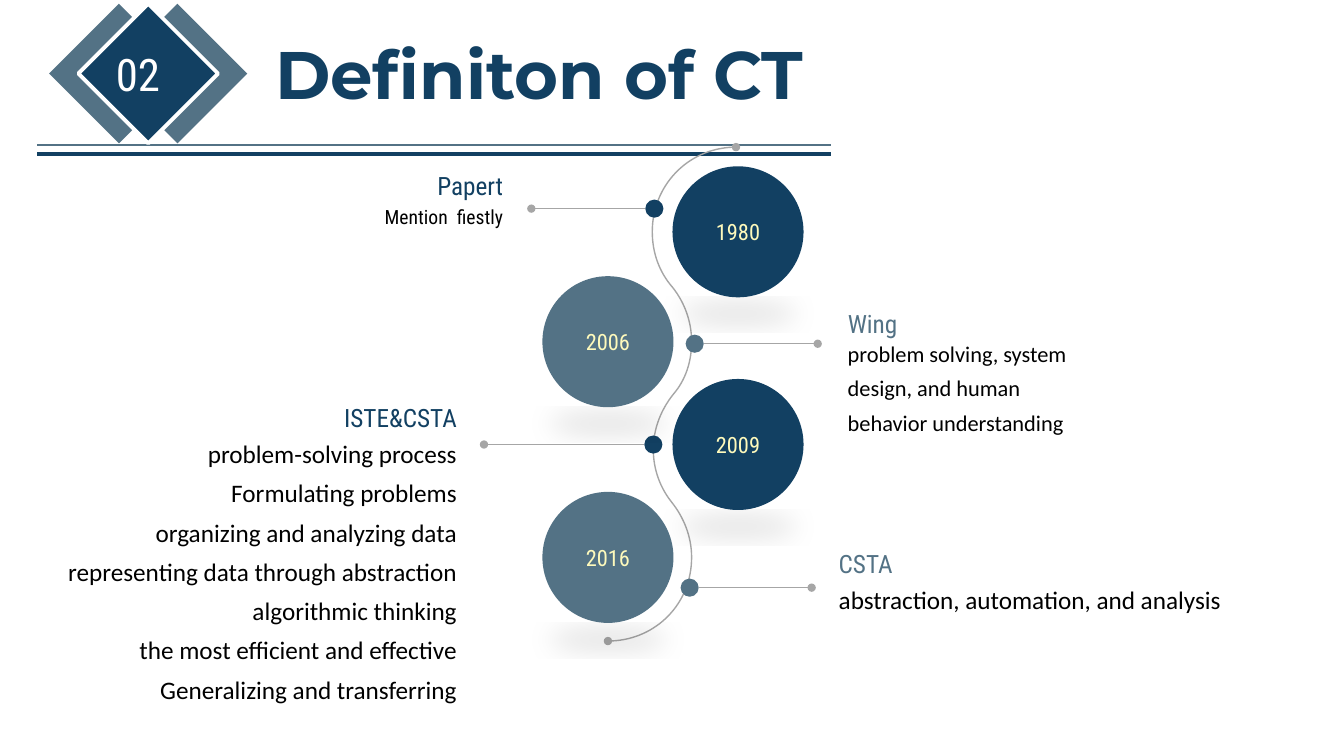
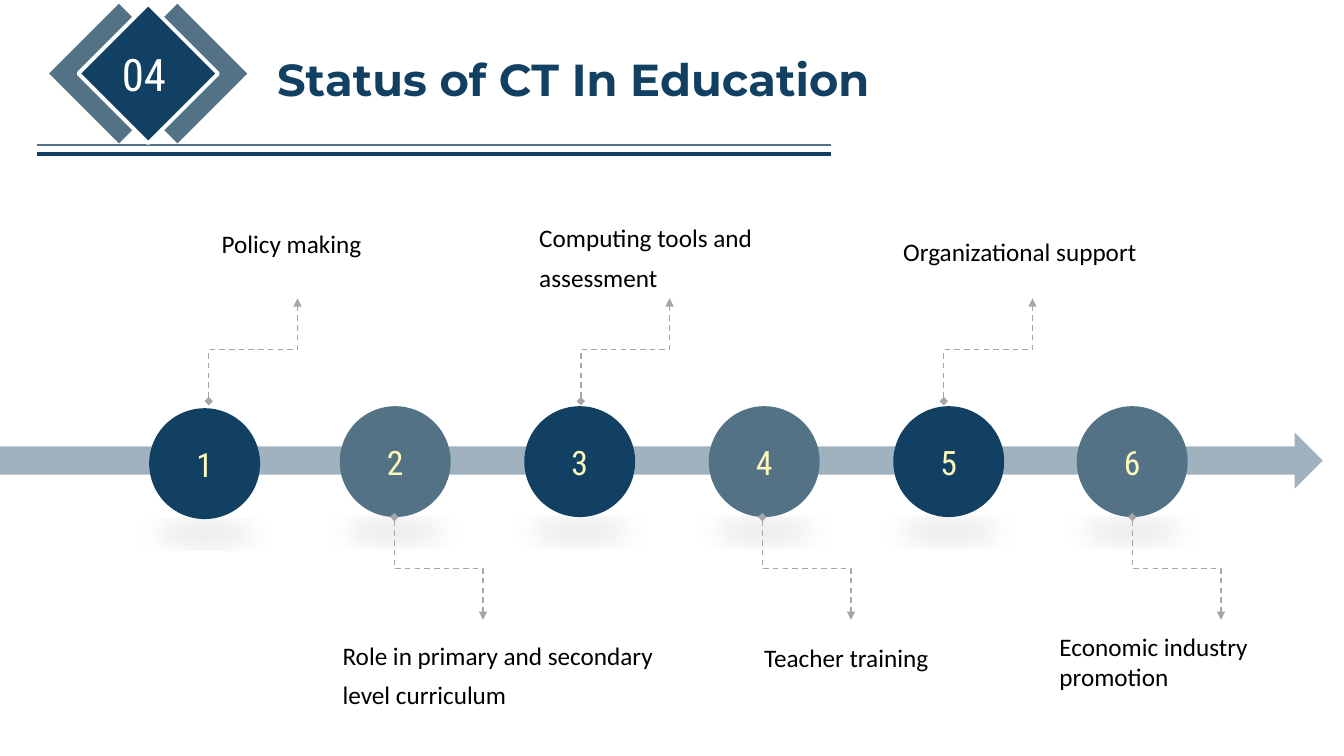
from lxml.etree import SubElement
from pptx import Presentation
from pptx.dml.color import RGBColor
from pptx.enum.dml import MSO_LINE
from pptx.enum.shapes import MSO_CONNECTOR as Link, MSO_SHAPE as Preset
from pptx.enum.text import MSO_ANCHOR as Anchor, MSO_AUTO_SIZE as AutoSize, PP_ALIGN as Align
from pptx.oxml.ns import qn
from pptx.util import Inches, Pt

NAVY, STEEL, GREY = "124062", "537285", "A6A6A6"
WHITE, BLACK, CREAM = "FFFFFF", "000000", "FEFABC"
LABEL_FONT, BODY_FONT, TITLE_FONT = "Roboto Condensed", "Calibri", "Montserrat"

MILESTONES = [
    ("1980", 6.67, 1.65, NAVY), ("2006", 5.38, 2.74, STEEL),
    ("2009", 6.67, 3.76, NAVY), ("2016", 5.38, 4.88, STEEL),
]
DOTS = [
    (6.4, 1.98, NAVY, 6.4, 5.27), (6.8, 3.32, STEEL, 6.98, 8.11),
    (6.39, 4.32, NAVY, 6.39, 4.8), (6.75, 5.74, STEEL, 6.93, 8.05),
]
WAVE = [
    (6.03, 6.36),
    (6.49, 6.36), (6.86, 5.99), (6.86, 5.53),
    (6.86, 5.32), (6.78, 5.13), (6.66, 4.98),
    (6.55, 4.84), (6.48, 4.66), (6.48, 4.46),
    (6.48, 4.25), (6.56, 4.06), (6.68, 3.91),
    (6.8, 3.77), (6.86, 3.59), (6.86, 3.39),
    (6.86, 3.19), (6.79, 3), (6.67, 2.85),
    (6.54, 2.7), (6.47, 2.51), (6.47, 2.3),
    (6.47, 1.84), (6.84, 1.46), (7.3, 1.46),
]
HEADINGS = [
    ("Papert", (4.16, 1.54, 0.93, 0.45), NAVY, Align.RIGHT),
    ("Wing", (8.31, 2.91, 0.79, 0.86), STEEL, Align.LEFT),
    ("ISTE&CSTA", (3.18, 3.84, 1.45, 0.45), NAVY, Align.RIGHT),
    ("CSTA", (8.22, 5.29, 0.79, 0.45), STEEL, Align.LEFT),
]
PROCESS = """problem-solving process
Formulating problems
organizing and analyzing data
representing data through abstraction
algorithmic thinking
the most efficient and effective
Generalizing and transferring"""
STEPS = [
    ("Policy making", (2.1, 2.22, 2.76, 0.4), 1, 1.48, 4.05, 2.07),
    ("Role in primary and secondary level curriculum", (3.3, 6.21, 3.34, 0.89), 1.3, 3.37, 4.03, 3.91),
    ("Computing tools and assessment", (5.25, 2.07, 2.76, 0.85), 1.3, 5.2, 4.03, 5.76),
    ("Teacher training", (7.48, 6.23, 2.76, 0.46), 1.3, 7.03, 4.03, 7.56),
    ("Organizational support", (8.86, 2.3, 2.76, 0.4), 1, 8.86, 4.03, 9.36),
    ("Economic industry promotion", (10.41, 6.21, 2.76, 0.71), 1, 10.68, 4.03, 11.23),
]


def rgb(color):
    """Turn a hex string into a colour."""
    return RGBColor.from_string(color)


def write_text(frame, text, size=18, font=BODY_FONT, color=BLACK, bold=False,
               align=Align.LEFT, spacing=1):
    """Fill a text frame, one paragraph for each line."""
    for index, line in enumerate(text.split("\n")):
        paragraph = frame.add_paragraph() if index else frame.paragraphs[0]
        paragraph.alignment = align
        paragraph.line_spacing = spacing
        run = paragraph.add_run()
        run.text = line
        run.font.size = Pt(size)
        run.font.name = font
        run.font.bold = bold
        run.font.color.rgb = rgb(color)


def add_text(slide, text, box, wrap=True, inset=0.05, **style):
    """Add a text box that grows with its text."""
    frame = slide.shapes.add_textbox(*map(Inches, box)).text_frame
    frame.word_wrap = wrap
    frame.auto_size = AutoSize.SHAPE_TO_FIT_TEXT
    frame.margin_top = frame.margin_bottom = Inches(inset)
    write_text(frame, text, **style)


def add_shape(slide, preset, box, fill):
    """Add a flat preset shape without an outline."""
    shape = slide.shapes.add_shape(preset, *map(Inches, box))
    shape.shadow.inherit = False
    shape.fill.solid()
    shape.fill.fore_color.rgb = rgb(fill)
    shape.line.fill.background()
    return shape


def add_ball(slide, text, left, top, diameter, fill, size):
    """Add a labelled circle with a flattened shadow below it."""
    ball = add_shape(slide, Preset.OVAL, (left, top, diameter, diameter), fill)
    frame = ball.text_frame
    frame.vertical_anchor = Anchor.MIDDLE
    frame.margin_left = frame.margin_right = 0
    write_text(frame, text, size=size, font=LABEL_FONT, color=CREAM, align=Align.CENTER)
    effects = ball._element.spPr.find(qn("a:effectLst"))
    shadow = SubElement(effects, qn("a:outerShdw"), blurRad=str(Pt(19)), dist=str(Pt(3)),
                        dir="5400000", sx="90000", sy="-19000", rotWithShape="0")
    shade = SubElement(shadow, qn("a:srgbClr"), val=BLACK)
    SubElement(shade, qn("a:alpha"), val="10000")


def style_line(line, color, width=1, dash=None, head=None, tail=None):
    """Set colour, width, dash and ends of a line."""
    line.color.rgb = rgb(color)
    line.width = Pt(width)
    if dash:
        line.dash_style = dash
    for tag, kind in (("a:headEnd", head), ("a:tailEnd", tail)):
        if kind:
            SubElement(line._get_or_add_ln(), qn(tag), type=kind)


def add_line(slide, start, end, color, kind=Link.STRAIGHT, **style):
    """Add a connector without a shadow."""
    connector = slide.shapes.add_connector(kind, *map(Inches, (*start, *end)))
    style_line(connector.line, color, **style)
    SubElement(connector._element.spPr, qn("a:effectLst"))
    return connector


def add_elbow(slide, left, top, upward):
    """Add a dashed elbow that leaves vertically, up or down."""
    length, width = 1.02, 0.88
    middle_x, middle_y = left + width / 2, top + length / 2
    low, high = middle_y - width / 2, middle_y + width / 2
    start_y, end_y = (high, low) if upward else (low, high)
    elbow = add_line(slide, (middle_x + length / 2, start_y), (middle_x - length / 2, end_y),
                     GREY, kind=Link.ELBOW, dash=MSO_LINE.DASH, head="diamond", tail="triangle")
    turn = 90 if upward else 270
    elbow._element.spPr.find(qn("a:xfrm")).set("rot", str(turn * 60000))


def add_curve(slide, points):
    """Draw an open Bezier curve through a start point and point triples."""
    start, *rest = [tuple(map(Inches, point)) for point in points]
    builder = slide.shapes.build_freeform(*start)
    builder.add_line_segments(rest, close=False)
    curve = builder.convert_to_shape()
    curve.shadow.inherit = False
    curve.fill.background()
    style_line(curve.line, GREY, head="oval", tail="oval")
    outline = next(curve._element.iter(qn("a:path")))
    segments = outline.findall(qn("a:lnTo"))
    for first in range(0, len(segments), 3):
        bezier = SubElement(outline, qn("a:cubicBezTo"))
        for segment in segments[first:first + 3]:
            bezier.append(segment[0])
            outline.remove(segment)


def add_header(slide, number, number_left, title, title_box, title_size):
    """Add the numbered diamonds, the title and the two rules."""
    add_line(slide, (8.24, 1.44), (0.37, 1.44), STEEL)
    for left, fill in ((1.27, STEEL), (0.69, STEEL), (0.98, NAVY)):
        diamond = add_shape(slide, Preset.RECTANGLE, (left, 0.24, 0.98, 0.98), fill)
        diamond.rotation = 45
    style_line(diamond.line, WHITE, width=2.75)
    add_text(slide, number, (number_left, 0.41, 0.67, 0.64), wrap=False,
             size=32, font=LABEL_FONT, color=WHITE)
    add_line(slide, (8.24, 1.53), (0.37, 1.53), NAVY, width=3)
    add_text(slide, title, title_box, wrap=False, size=title_size,
             font=TITLE_FONT, color=NAVY, bold=True)


def build_definition(slide):
    """Build the winding timeline of definitions."""
    add_header(slide, "02", 1.05, "Definiton of CT", (2.63, 0.27, 5.74, 0.91), 48)
    add_curve(slide, WAVE)
    for left, top, color, near, far in DOTS:
        add_shape(slide, Preset.OVAL, (left, top, 0.18, 0.18), color)
        add_line(slide, (near, top + 0.09), (far, top + 0.09), GREY, tail="oval")
    for text, box, color, align in HEADINGS:
        add_text(slide, text, box, wrap=False, inset=0, font=LABEL_FONT,
                 color=color, align=align, spacing=1.5)
    add_text(slide, "Mention  fiestly", (2.39, 1.91, 2.7, 0.6), size=14,
             font=LABEL_FONT, align=Align.RIGHT, spacing=1.3)
    add_text(slide, "problem solving, system design, and human behavior understanding",
             (8.31, 3.24, 2.7, 1.12), size=16, spacing=1.3)
    add_text(slide, PROCESS, (0, 4.21, 4.63, 2.86), align=Align.RIGHT, spacing=1.3)
    add_text(slide, "abstraction, automation, and analysis",
             (8.22, 5.66, 4.54, 0.46), spacing=1.3)
    for year, left, top, color in MILESTONES:
        add_ball(slide, year, left, top, 1.3, color, 16)


def build_status(slide):
    """Build the arrow with six numbered steps."""
    add_header(slide, "04", 1.11, "Status of CT In Education", (2.65, 0.46, 6.5, 0.64), 32)
    arrow = add_shape(slide, Preset.RIGHT_ARROW, (0, 4.29, 13.12, 0.56), NAVY)
    shade = next(arrow._element.spPr.iter(qn("a:srgbClr")))
    SubElement(shade, qn("a:alpha"), val="40000")
    for number, (_, _, _, left, top, _) in enumerate(STEPS, 1):
        add_ball(slide, str(number), left, top, 1.1, NAVY if number % 2 else STEEL, 24)
    for number, (text, box, spacing, _, _, elbow_left) in enumerate(STEPS, 1):
        upward = number % 2 == 1
        add_elbow(slide, elbow_left, 2.96 if upward else 5.13, upward)
        add_text(slide, text, box, spacing=spacing)


def main():
    """Build and save the presentation."""
    presentation = Presentation()
    presentation.slide_width, presentation.slide_height = Inches(13.33), Inches(7.5)
    for build in (build_definition, build_status):
        build(presentation.slides.add_slide(presentation.slide_layouts[6]))
    presentation.save("out.pptx")


if __name__ == "__main__":
    main()
